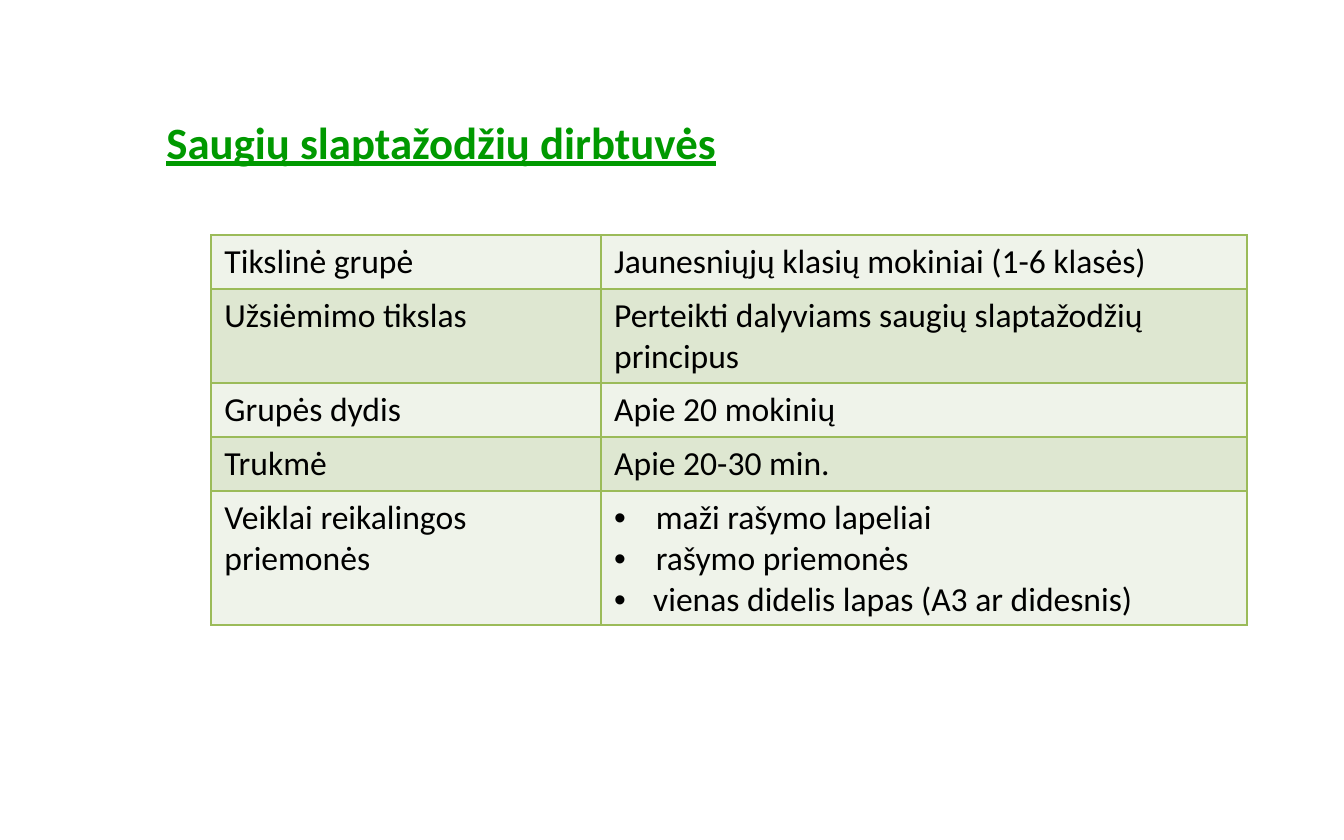
"""Build the slide describing the safe password workshop."""
import pptx
import pptx.dml.color
import pptx.enum.text
import pptx.oxml
import pptx.oxml.ns
import pptx.util

Inches = pptx.util.Inches
RGBColor = pptx.dml.color.RGBColor

GREEN = RGBColor(0x00, 0x99, 0x00)
BLACK = RGBColor(0x00, 0x00, 0x00)
BORDER = RGBColor(0x9B, 0xBB, 0x59)
BANDS = [RGBColor(0xEF, 0xF3, 0xEA), RGBColor(0xDE, 0xE7, 0xD1)]

ROWS = [
    ("Tikslinė grupė", ["Jaunesniųjų klasių mokiniai (1-6 klasės)"]),
    ("Užsiėmimo tikslas", ["Perteikti dalyviams saugių slaptažodžių principus"]),
    ("Grupės dydis", ["Apie 20 mokinių"]),
    ("Trukmė", ["Apie 20-30 min."]),
    (
        "Veiklai reikalingos priemonės",
        ["maži rašymo lapeliai", "rašymo priemonės", "vienas didelis lapas (A3 ar didesnis)"],
    ),
]
COLUMN_WIDTHS = [2.9, 4.81]
ROW_HEIGHT = 0.4
BULLET_INDENTS = [0.31, 0.31, 0.29]


def write(para, text, size=18, color=BLACK, bold=False, underline=False, indent=None):
    if indent:
        properties = para._p.get_or_add_pPr()
        properties.set("marL", str(Inches(indent)))
        properties.set("indent", str(-Inches(indent)))
        namespace = pptx.oxml.ns.nsdecls("a")
        properties.append(pptx.oxml.parse_xml(f'<a:buFont {namespace} typeface="Arial"/>'))
        properties.append(pptx.oxml.parse_xml(f'<a:buChar {namespace} char="•"/>'))
    span = para.add_run()
    span.text = text
    span.font.name = "Calibri"
    span.font.size = pptx.util.Pt(size)
    span.font.color.rgb = color
    span.font.bold = bold
    span.font.underline = underline


def add_borders(cell):
    properties = cell._tc.get_or_add_tcPr()
    for side in ("lnL", "lnR", "lnT", "lnB"):
        properties.append(pptx.oxml.parse_xml(
            f'<a:{side} {pptx.oxml.ns.nsdecls("a")} w="{pptx.util.Pt(1)}">'
            f'<a:solidFill><a:srgbClr val="{BORDER}"/></a:solidFill></a:{side}>'
        ))


deck = pptx.Presentation()
deck.slide_width = Inches(10)
deck.slide_height = Inches(6.25)
page = deck.slides.add_slide(deck.slide_layouts[6])

title_box = page.shapes.add_textbox(Inches(1.14), Inches(0.53), Inches(8.29), Inches(1.04))
title_box.text_frame.word_wrap = True
title_box.text_frame.vertical_anchor = pptx.enum.text.MSO_ANCHOR.MIDDLE
write(title_box.text_frame.paragraphs[0], "Saugių slaptažodžių dirbtuvės",
      size=24, color=GREEN, bold=True, underline=True)

table = page.shapes.add_table(
    len(ROWS), len(COLUMN_WIDTHS), Inches(1.57), Inches(1.75),
    Inches(sum(COLUMN_WIDTHS)), Inches(ROW_HEIGHT * len(ROWS)),
).table
table.first_row = False
table.horz_banding = False
for column, width in zip(table.columns, COLUMN_WIDTHS):
    column.width = Inches(width)

for row_index, (label, details) in enumerate(ROWS):
    table.rows[row_index].height = Inches(ROW_HEIGHT)
    for column_index, lines in enumerate([[label], details]):
        cell = table.cell(row_index, column_index)
        add_borders(cell)
        cell.fill.solid()
        cell.fill.fore_color.rgb = BANDS[row_index % 2]
        for line_index, line in enumerate(lines):
            frame = cell.text_frame
            para = frame.add_paragraph() if line_index else frame.paragraphs[0]
            write(para, line, indent=BULLET_INDENTS[line_index] if len(lines) > 1 else None)

deck.save("out.pptx")
